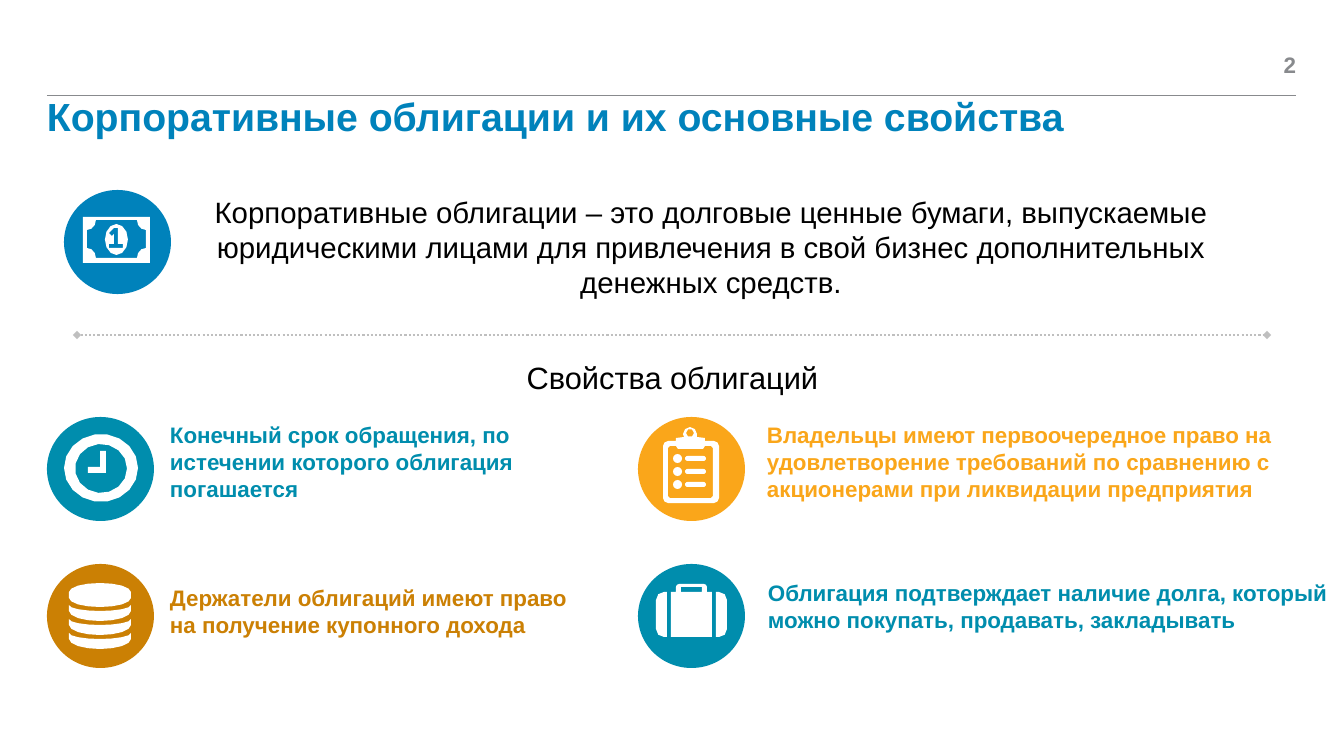
import math
from dataclasses import dataclass

from lxml import etree
from pptx import Presentation
from pptx import util as u
from pptx.dml.color import RGBColor
from pptx.enum import dml, shapes, text
from pptx.oxml.ns import qn

SCALE = 914400 / 100.8  # EMU in one px
FINE = 10  # outline steps in one px


@dataclass(frozen=True)
class Theme:
    font: str = "Arial"
    blue: str = "0082BB"
    teal: str = "008DAD"
    orange: str = "FAA61A"
    brown: str = "CB8004"
    grey: str = "888A8D"
    light_grey: str = "BFBFBF"
    black: str = "000000"
    white: str = "FFFFFF"
    title_size: int = 28
    heading_size: int = 22
    lead_size: int = 21
    body_size: int = 16


THEME = Theme()
CIRCLE_SIZE = (107, 104)


def px(length):
    return u.Emu(round(length * SCALE))


def set_values(target, values):
    for name, value in values.items():
        setattr(target, name, value)


# Basic parts
def add_text(slide, box, words, size, color, bold=False, align=text.PP_ALIGN.LEFT,
             anchor=text.MSO_ANCHOR.TOP, spacing=1.0):
    frame = slide.shapes.add_textbox(*map(px, box)).text_frame
    set_values(frame, dict(word_wrap=True, vertical_anchor=anchor, margin_left=0,
                           margin_top=0, margin_right=0, margin_bottom=0))
    paragraph = frame.paragraphs[0]
    set_values(paragraph, dict(text=words, alignment=align, line_spacing=spacing))
    font = paragraph.runs[0].font
    set_values(font, dict(name=THEME.font, size=u.Pt(size), bold=bold))
    font.color.rgb = RGBColor.from_string(color)


def add_rule(slide, left, right, y, color, width):
    rule = slide.shapes.add_connector(
        shapes.MSO_CONNECTOR.STRAIGHT, px(left), px(y), px(right), px(y))
    rule.line.color.rgb = RGBColor.from_string(color)
    rule.line.width = u.Pt(width)
    etree.SubElement(rule._element.spPr, qn("a:effectLst"))
    return rule


def paint(shape, color):
    shape.shadow.inherit = False
    shape.fill.solid()
    shape.fill.fore_color.rgb = RGBColor.from_string(color)
    shape.line.fill.background()


def add_preset(slide, preset, box, color):
    shape = slide.shapes.add_shape(preset, *map(px, box))
    paint(shape, color)
    return shape


# Outlines, in px from the corner of the icon's circle
def arc(x, y, radius_x, radius_y, start, end):
    quarters = abs(end - start) / 90
    steps = math.ceil(0.7 * math.sqrt(max(radius_x, radius_y)) * quarters)
    angles = [math.radians(start + (end - start) * step / steps)
              for step in range(steps + 1)]
    return [(x + radius_x * math.cos(a), y + radius_y * math.sin(a)) for a in angles]


def oval(left, top, width, height):
    radius_x, radius_y = width / 2, height / 2
    return arc(left + radius_x, top + radius_y, radius_x, radius_y, 0, 360)[:-1]


def rectangle(left, top, width, height):
    right, bottom = left + width, top + height
    return [(left, top), (right, top), (right, bottom), (left, bottom)]


def add_outline(slide, left, top, contours):
    fine = [[(round(x * FINE), round(y * FINE)) for x, y in contour]
            for contour in contours]
    builder = slide.shapes.build_freeform(*fine[0][0], scale=SCALE / FINE)
    for index, contour in enumerate(fine):
        if index:
            builder.move_to(*contour[0])
        builder.add_line_segments(contour[1:], close=True)
    paint(builder.convert_to_shape(px(left), px(top)), THEME.white)


# Icons: each returns the contours of one outline
def banknote():
    notched = (arc(82, 68, 9, 10, 270, 180) + arc(23, 68, 9, 10, 360, 270)
               + arc(23, 30, 9, 10, 90, 0) + arc(82, 30, 9, 10, 180, 90))
    digit = [(59, 58), (59, 54), (54, 54), (54, 38), (50, 38), (45, 43),
             (48, 46), (50, 44), (50, 54), (45, 54), (45, 58)]
    return [rectangle(19, 27, 67, 46), notched, oval(41, 34, 23, 31), digit]


def clock():
    hands = [(59, 34), (59, 56), (41, 56), (41, 50), (53, 50), (53, 34)]
    return [oval(17, 17, 74, 68), oval(28, 27, 52, 49), hands]


def coins():
    lid = arc(53, 34, 31, 9, 0, 180) + arc(53, 28, 31, 9, 180, 360)
    bands = [arc(53, top + 6, 31, 10, 0, 180) + arc(53, top, 31, 6, 180, 0)
             for top in range(41, 83, 14)]
    return [lid] + bands


def suitcase():
    left_side = (arc(26, 65, 8, 8, 90, 180) + arc(26, 36, 8, 8, 180, 270)
                 + [(29, 28), (29, 73)])
    right_side = [(107 - x, y) for x, y in left_side]
    body = ([(74, 73), (33, 73), (33, 28), (38, 28)] + arc(41, 23, 3, 3, 180, 270)
            + arc(66, 23, 3, 3, 270, 360) + [(69, 28), (74, 28)])
    return [left_side, body, rectangle(43, 23, 21, 5), right_side]


def clipboard():
    board = (arc(30, 81, 5, 5, 90, 180) + arc(30, 29, 5, 5, 180, 270)
             + [(38, 24), (38, 21), (46, 20)] + arc(52, 17, 7, 7, 180, 360)
             + [(59, 20), (67, 21), (67, 24)]
             + arc(76, 29, 5, 5, 270, 360) + arc(76, 81, 5, 5, 0, 90))
    sheet = [(32, 81), (30, 79), (30, 31), (32, 29), (38, 29), (40, 32), (65, 32),
             (67, 29), (73, 29), (75, 31), (75, 79), (73, 81)]
    return [board, oval(48, 12, 8, 8), sheet]


def add_icon(slide, left, top, color, icon):
    add_preset(slide, shapes.MSO_SHAPE.OVAL, (left, top, *CIRCLE_SIZE), color)
    add_outline(slide, left, top, icon())
    if icon is clipboard:
        add_list_rows(slide, left + 35, top + 37)


def add_list_rows(slide, left, top):
    for y in range(top, top + 39, 13):
        add_preset(slide, shapes.MSO_SHAPE.OVAL, (left, y, 9, 9), THEME.white)
        bar = add_preset(slide, shapes.MSO_SHAPE.ROUNDED_RECTANGLE,
                         (left + 12, y + 2, 21, 5), THEME.white)
        bar.adjustments[0] = 0.5


# Regions
def add_header(slide, left, top, width):
    add_text(slide, (left + width - 82, top, 82, 35), "2", THEME.body_size, THEME.grey,
             True, text.PP_ALIGN.RIGHT, text.MSO_ANCHOR.MIDDLE)
    add_rule(slide, left, left + width, top + 48, THEME.grey, 0.5)
    add_text(slide, (left, top + 51, width, 50),
             "Корпоративные облигации и их основные свойства",
             THEME.title_size, THEME.blue, True, spacing=0.9)


def add_definition(slide, left, top):
    add_icon(slide, left, top, THEME.blue, banknote)
    add_text(slide, (left + 94, top + 4, 1106, 107),
             "Корпоративные облигации – это долговые ценные бумаги, выпускаемые "
             "юридическими лицами для привлечения в свой бизнес дополнительных "
             "денежных средств.",
             THEME.lead_size, THEME.black, align=text.PP_ALIGN.CENTER)


def add_divider(slide, left, right, y):
    divider = add_rule(slide, left, right, y, THEME.light_grey, 1.5)
    divider.line.dash_style = dml.MSO_LINE.ROUND_DOT
    for end in ("a:headEnd", "a:tailEnd"):
        etree.SubElement(divider.line._get_or_add_ln(), qn(end), type="diamond")


def add_properties(slide, left, top):
    add_text(slide, (left + 440, top, 371, 37), "Свойства облигаций",
             THEME.heading_size, THEME.black, align=text.PP_ALIGN.CENTER)
    cards = [
        (0, 0, THEME.teal, clock, (123, 4, 427, 82),
         "Конечный срок обращения, по истечении которого облигация погашается"),
        (1, 0, THEME.orange, clipboard, (129, 4, 527, 82),
         "Владельцы имеют первоочередное право на удовлетворение требований "
         "по сравнению с акционерами при ликвидации предприятия"),
        (0, 1, THEME.brown, coins, (123, 20, 427, 54),
         "Держатели облигаций имеют право на получение купонного дохода"),
        (1, 1, THEME.teal, suitcase, (130, 15, 577, 54),
         "Облигация подтверждает наличие долга, который можно покупать, "
         "продавать, закладывать"),
    ]
    for column, row, color, icon, (x, y, width, height), words in cards:
        card_left, card_top = left + 591 * column, top + 58 + 147 * row
        add_icon(slide, card_left, card_top, color, icon)
        add_text(slide, (card_left + x, card_top + y, width, height), words,
                 THEME.body_size, color, True)


def main():
    presentation = Presentation()
    set_values(presentation, dict(slide_width=px(1344), slide_height=px(756)))
    slide = presentation.slides.add_slide(presentation.slide_layouts[6])
    add_header(slide, 47, 47, 1249)
    add_definition(slide, 64, 190)
    add_divider(slide, 77, 1267, 335)
    add_properties(slide, 47, 359)
    presentation.save("out.pptx")


if __name__ == "__main__":
    main()
